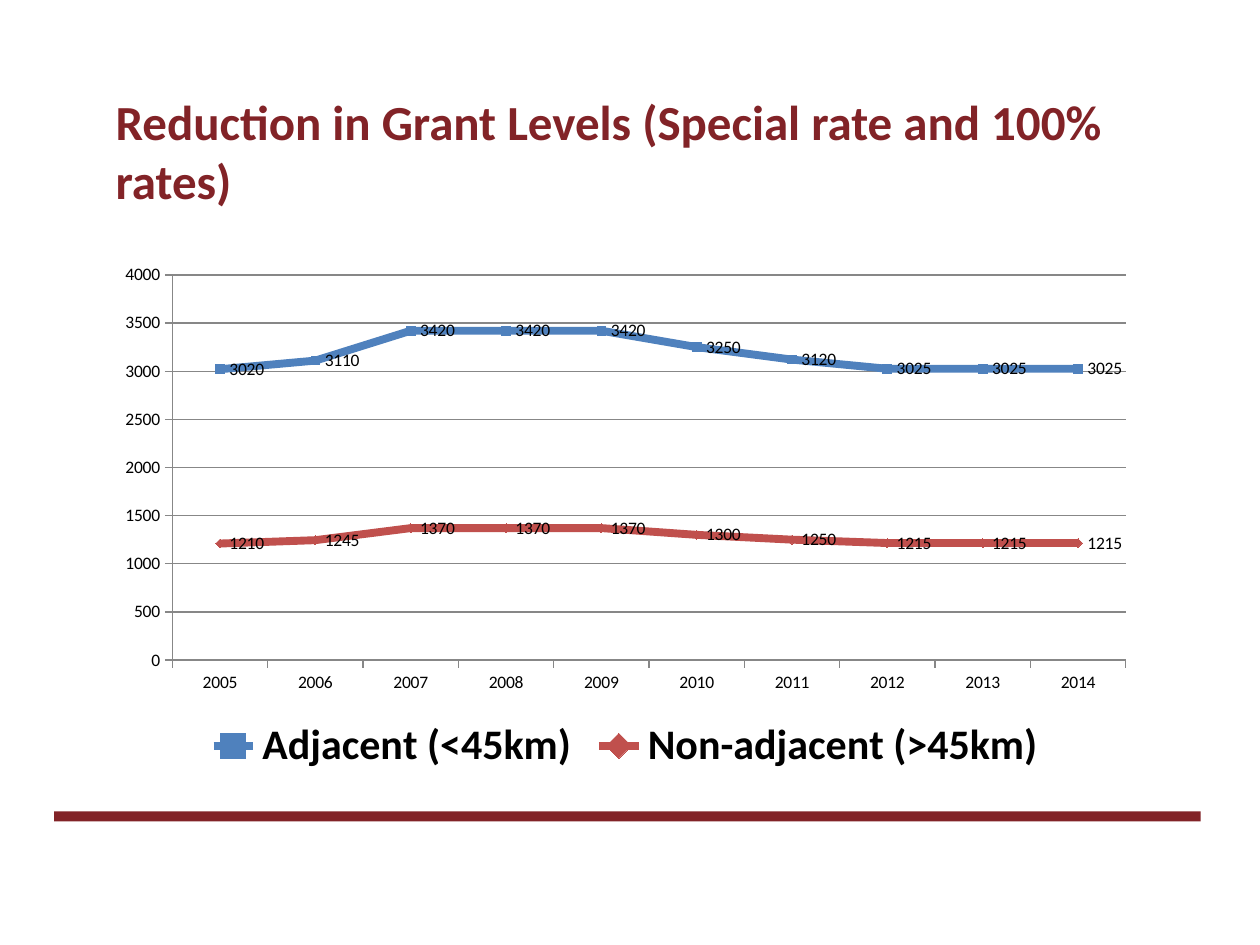
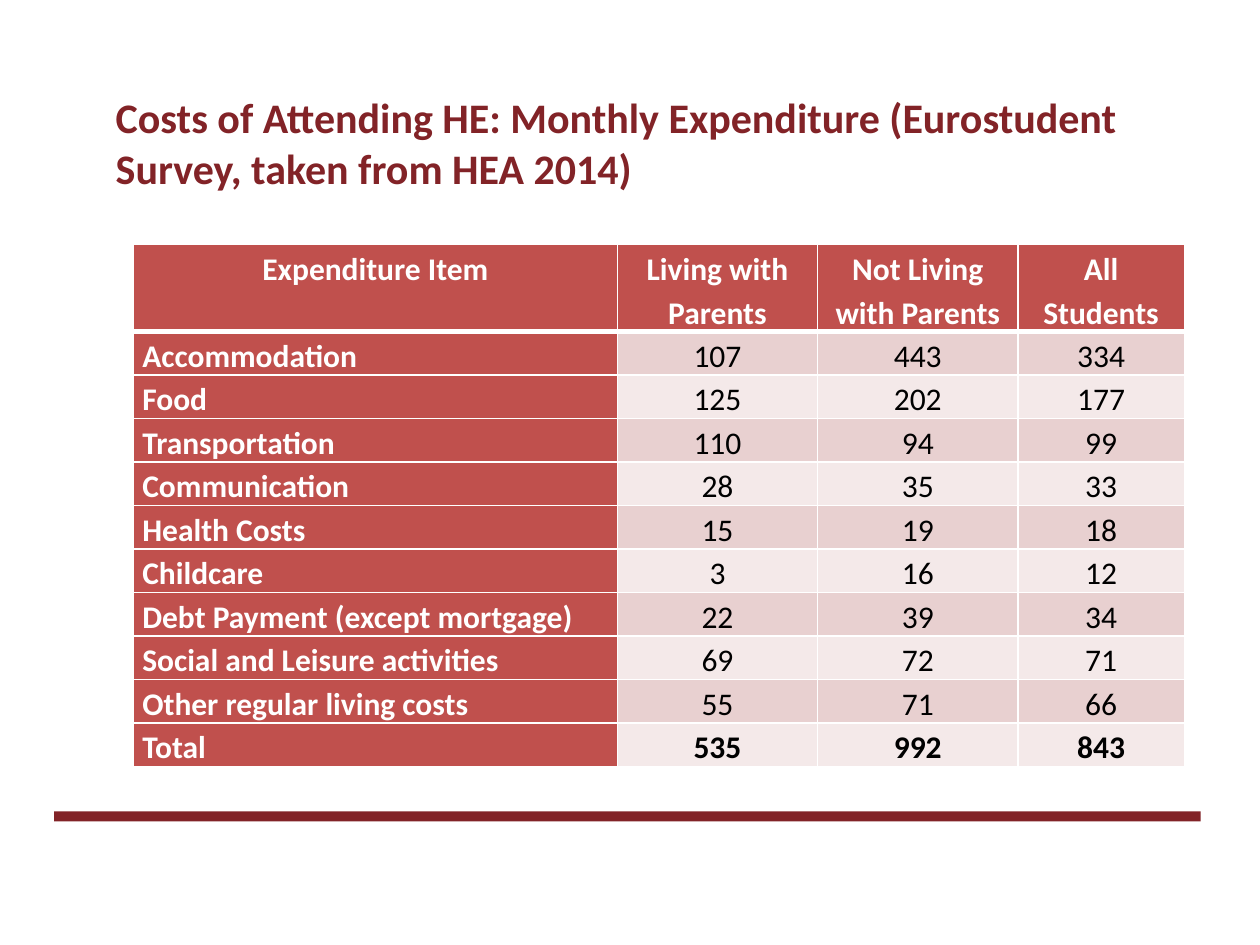
from lxml import etree
from pptx import Presentation
from pptx.chart.data import CategoryChartData
from pptx.dml.color import RGBColor
from pptx.enum.chart import (XL_CHART_TYPE as ChartType, XL_LABEL_POSITION as LabelPosition,
                             XL_LEGEND_POSITION as LegendPosition, XL_MARKER_STYLE as Marker,
                             XL_TICK_MARK as Tick)
from pptx.enum.shapes import MSO_SHAPE as Shape
from pptx.enum.text import MSO_ANCHOR as Anchor, PP_ALIGN as Align
from pptx.oxml.ns import qn
from pptx.util import Inches, Pt
from dataclasses import dataclass


@dataclass(frozen=True)
class Theme:
    font: str = "Calibri"
    maroon: str = "822327"
    blue: str = "4F81BD"
    red: str = "C0504D"
    band_dark: str = "E8D0D0"
    band_light: str = "F4E9E9"
    grid: str = "878787"
    white: str = "FFFFFF"
    black: str = "000000"
    chart_size: int = 10
    legend_size: int = 24
    table_size: int = 18


theme = Theme()


def set_font(font, size, color, bold):
    values = {"name": theme.font, "size": Pt(size), "bold": bold}
    for name, value in values.items():
        setattr(font, name, value)
    font.color.rgb = RGBColor.from_string(color)


def set_borders(cell, widths):
    """Draw white borders; widths maps a:lnL, a:lnR, a:lnT and a:lnB to points."""
    properties = cell._tc.get_or_add_tcPr()
    for position, (tag, width) in enumerate(widths.items()):
        line = etree.Element(qn(tag), w=str(Pt(width)))
        fill = etree.SubElement(line, qn("a:solidFill"))
        etree.SubElement(fill, qn("a:srgbClr"), val=theme.white)
        properties.insert(position, line)


deck = Presentation()
deck.slide_width, deck.slide_height = Inches(10), Inches(7.5)

# Title and footer band shared by both pages
titles = [
    ("Reduction in Grant Levels (Special rate and 100% rates)", 28),
    ("Costs of Attending HE: Monthly Expenditure (Eurostudent Survey, taken from HEA 2014)", 24),
]
pages = []
for title, title_size in titles:
    page = deck.slides.add_slide(deck.slide_layouts[6])
    band = page.shapes.add_shape(Shape.RECTANGLE, Inches(0.43), Inches(6.44),
                                 Inches(9.1), Inches(0.08))
    band.shadow.inherit = False
    band.fill.solid()
    band.fill.fore_color.rgb = RGBColor.from_string(theme.maroon)
    band.line.fill.background()

    box = page.shapes.add_textbox(Inches(0.82), Inches(0.68), Inches(8.27), Inches(1.1))
    box.text_frame.word_wrap = True
    box.text_frame.vertical_anchor = Anchor.TOP
    span = box.text_frame.paragraphs[0].add_run()
    span.text = title
    set_font(span.font, title_size, theme.maroon, True)
    pages.append(page)

grant_page, cost_page = pages

# Grant levels chart
grants = [
    ("Adjacent (<45km)", [3020, 3110, 3420, 3420, 3420, 3250, 3120, 3025, 3025, 3025],
     theme.blue, Marker.SQUARE),
    ("Non-adjacent (>45km)", [1210, 1245, 1370, 1370, 1370, 1300, 1250, 1215, 1215, 1215],
     theme.red, Marker.DIAMOND),
]
data = CategoryChartData()
data.categories = [str(year) for year in range(2005, 2015)]
for name, amounts, _, _ in grants:
    data.add_series(name, amounts)
chart = grant_page.shapes.add_chart(ChartType.LINE_MARKERS, Inches(0.83), Inches(2.02),
                                    Inches(8.27), Inches(4.17), data).chart
set_font(chart.font, theme.chart_size, theme.black, False)
chart.has_title = False
chart.has_legend = True
chart.legend.position = LegendPosition.BOTTOM
chart.legend.include_in_layout = False
set_font(chart.legend.font, theme.legend_size, theme.black, True)

plot = chart.plots[0]
plot.vary_by_categories = False
for series, (_, _, color, marker) in zip(plot.series, grants):
    series.smooth = False
    series.format.line.width = Pt(4.5)
    series.format.line.color.rgb = RGBColor.from_string(color)
    series.marker.style = marker
    series.marker.size = 5
    series.marker.format.fill.solid()
    series.marker.format.fill.fore_color.rgb = RGBColor.from_string(color)
    series.marker.format.line.color.rgb = RGBColor.from_string(color)
    labels = series.data_labels
    labels.show_value = True
    labels.position = LabelPosition.RIGHT
    set_font(labels.font, theme.chart_size, theme.black, False)

amount_axis = chart.value_axis
scale = {"minimum_scale": 0, "maximum_scale": 4000, "major_unit": 500,
         "has_major_gridlines": True}
for name, value in scale.items():
    setattr(amount_axis, name, value)
for axis in (chart.category_axis, amount_axis):
    axis.major_tick_mark = Tick.OUTSIDE
    axis.minor_tick_mark = Tick.NONE
for lined in (chart.category_axis, amount_axis, amount_axis.major_gridlines):
    lined.format.line.color.rgb = RGBColor.from_string(theme.grid)
    lined.format.line.width = Pt(0.75)

# Monthly expenditure table
costs = [
    ("Expenditure Item", "Living with Parents", "Not Living with Parents", "All Students"),
    ("Accommodation", 107, 443, 334),
    ("Food", 125, 202, 177),
    ("Transportation", 110, 94, 99),
    ("Communication", 28, 35, 33),
    ("Health Costs", 15, 19, 18),
    ("Childcare", 3, 16, 12),
    ("Debt Payment (except mortgage)", 22, 39, 34),
    ("Social and Leisure activities", 69, 72, 71),
    ("Other regular living costs", 55, 71, 66),
    ("Total", 535, 992, 843),
]
column_widths = [3.84, 1.59, 1.59, 1.32]
header_height, row_height = 0.65, 0.31
last_row = len(costs) - 1
table = cost_page.shapes.add_table(
    len(costs), len(column_widths), Inches(1.06), Inches(1.94), Inches(sum(column_widths)),
    Inches(header_height + row_height * last_row)).table
for column, width in zip(table.columns, column_widths):
    column.width = Inches(width)

margins = {"margin_left": Inches(0.07), "margin_right": Inches(0.07),
           "margin_top": 0, "margin_bottom": 0}
for row, entries in enumerate(costs):
    table.rows[row].height = Inches(row_height if row else header_height)
    for column, entry in enumerate(entries):
        cell = table.cell(row, column)
        for name, value in margins.items():
            setattr(cell, name, value)
        is_heading = row == 0 or column == 0
        band_color = theme.band_dark if row % 2 else theme.band_light
        cell.fill.solid()
        cell.fill.fore_color.rgb = RGBColor.from_string(theme.red if is_heading else band_color)
        set_borders(cell, {"a:lnL": 1, "a:lnR": 1, "a:lnT": 3 if row == 1 else 1,
                           "a:lnB": 3 if row == 0 else 1})
        para = cell.text_frame.paragraphs[0]
        para.alignment = Align.JUSTIFY if row and column == 0 else Align.CENTER
        para.line_spacing = 1.15
        span = para.add_run()
        span.text = str(entry)
        set_font(span.font, theme.table_size, theme.white if is_heading else theme.black,
                 is_heading or row == last_row)

deck.save("out.pptx")
